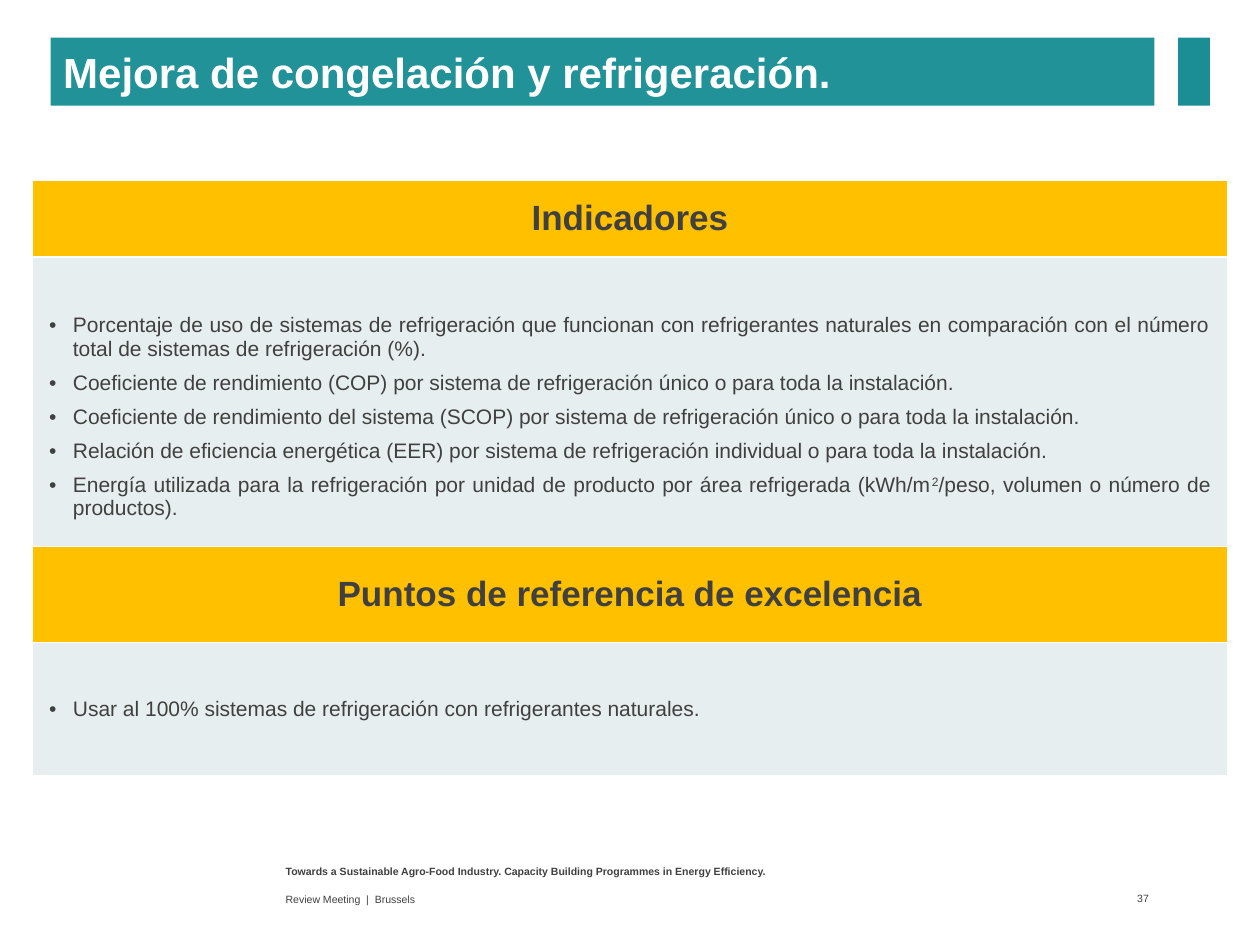
from lxml import etree
from pptx import Presentation
from pptx.dml.color import RGBColor
from pptx.enum.shapes import MSO_SHAPE
from pptx.enum.text import MSO_ANCHOR, MSO_AUTO_SIZE, PP_ALIGN
from pptx.oxml.ns import qn
from pptx.util import Cm, Pt

MIDDLE, TOP = MSO_ANCHOR.MIDDLE, MSO_ANCHOR.TOP
LEFT, CENTER = PP_ALIGN.LEFT, PP_ALIGN.CENTER
RIGHT, JUSTIFY = PP_ALIGN.RIGHT, PP_ALIGN.JUSTIFY
RECTANGLE = MSO_SHAPE.RECTANGLE

COLORS = {
    "text": "404040",
    "white": "FFFFFF",
    "banner": "209298",
    "accent": "1B8E95",
    "heading": "FFC000",
    "body": "E7EEEF",
}
FONT = "Arial"
TABLE_LEFT, TABLE_WIDTH = Cm(0.66), Cm(24.08)
INDENT = Cm(0.48)
BORDERS = ("a:lnL", "a:lnR", "a:lnT", "a:lnB")

# Heading, top, row heights, bottom margin of the list, list items.
# A tuple item holds text before, superscript and text after.
# The second table covers the foot of the first, hence its larger margin.
SECTIONS = [
    ("Indicadores", 3.63, (1.55, 7.16), 0.86, [
        "Porcentaje de uso de sistemas de refrigeración que funcionan con refrigerantes "
        "naturales en comparación con el número total de sistemas de refrigeración (%).",
        "Coeficiente de rendimiento (COP) por sistema de refrigeración único o para toda "
        "la instalación.",
        "Coeficiente de rendimiento del sistema (SCOP) por sistema de refrigeración único "
        "o para toda la instalación.",
        "Relación de eficiencia energética (EER) por sistema de refrigeración individual "
        "o para toda la instalación.",
        ("Energía utilizada para la refrigeración por unidad de producto por área "
         "refrigerada (kWh/m", "2", "/peso, volumen o número de productos)."),
    ]),
    ("Puntos de referencia de excelencia", 11.02, (1.93, 2.69), 0.15, [
        "Usar al 100% sistemas de refrigeración con refrigerantes naturales.",
    ]),
]

FOOTERS = [
    ("Towards a Sustainable Agro-Food Industry. Capacity Building Programmes in Energy "
     "Efficiency.", (5.51, 17.32, 13.97, 0.53), TOP, LEFT, True, 0.25),
    ("Review Meeting  |  Brussels", (5.51, 17.88, 13.97, 0.48), MIDDLE, LEFT, False, 0.25),
    ("37", (21.84, 17.86, 1.42, 0.51), MIDDLE, RIGHT, False, 0.1),
]


def format_text(paragraph, size, bold=False, color="text", align=LEFT):
    paragraph.alignment = align
    for run in paragraph.runs:
        run.font.name = FONT
        run.font.size = Pt(size)
        run.font.bold = bold
        run.font.color.rgb = RGBColor.from_string(COLORS[color])


def style_cell(cell, fill):
    """Give the cell white borders, a fill and centred height."""
    cell.vertical_anchor = MIDDLE
    properties = cell._tc.get_or_add_tcPr()
    for side in BORDERS:
        line = etree.SubElement(properties, qn(side), w=str(Pt(1)))
        solid = etree.SubElement(line, qn("a:solidFill"))
        etree.SubElement(solid, qn("a:srgbClr"), val=COLORS["white"])
    cell.fill.solid()
    cell.fill.fore_color.rgb = RGBColor.from_string(COLORS[fill])


prs = Presentation()
prs.slide_width, prs.slide_height = Cm(25.4), Cm(19.05)
slide = prs.slides.add_slide(prs.slide_layouts[5])

# Footer lines and page number
for wording, place, anchor, align, bold, right_margin in FOOTERS:
    frame = slide.shapes.add_textbox(*map(Cm, place)).text_frame
    frame.word_wrap = True
    frame.vertical_anchor = anchor
    frame.margin_right = Cm(right_margin)
    frame.text = wording
    format_text(frame.paragraphs[0], 6, bold, align=align)

# Heading and list tables
for heading, top, heights, bottom_margin, items in SECTIONS:
    table = slide.shapes.add_table(
        2, 1, TABLE_LEFT, Cm(top), TABLE_WIDTH, Cm(sum(heights))).table
    for row, height in zip(table.rows, heights):
        row.height = Cm(height)

    heading_cell, list_cell = table.cell(0, 0), table.cell(1, 0)
    style_cell(heading_cell, "heading")
    heading_cell.text_frame.text = heading
    format_text(heading_cell.text_frame.paragraphs[0], 20, True, align=CENTER)

    style_cell(list_cell, "body")
    list_cell.margin_left = list_cell.margin_right = Cm(0.33)
    list_cell.margin_top, list_cell.margin_bottom = Cm(0.15), Cm(bottom_margin)
    for index, item in enumerate(items):
        frame = list_cell.text_frame
        paragraph = frame.paragraphs[0] if index == 0 else frame.add_paragraph()
        paragraph.space_after = Pt(6)
        properties = paragraph._p.get_or_add_pPr()
        properties.set("marL", str(INDENT))
        properties.set("indent", str(-INDENT))
        etree.SubElement(properties, qn("a:buFont"), typeface=FONT)
        etree.SubElement(properties, qn("a:buChar"), char="•")
        if isinstance(item, tuple):
            for part in item:
                paragraph.add_run().text = part
            paragraph.runs[1]._r.get_or_add_rPr().set("baseline", "30000")
        else:
            paragraph.text = item
        format_text(paragraph, 12, align=JUSTIFY)

# Title banner
title = slide.shapes.title
title.left, title.top, title.width, title.height = map(Cm, (1.02, 0.76, 22.25, 1.37))
title.fill.solid()
title.fill.fore_color.rgb = RGBColor.from_string(COLORS["banner"])
title.text_frame.text = "Mejora de congelación y refrigeración."
title.text_frame.auto_size = MSO_AUTO_SIZE.NONE
title.text_frame.vertical_anchor = MIDDLE
format_text(title.text_frame.paragraphs[0], 24, True, "white")

accent = slide.shapes.add_shape(RECTANGLE, *map(Cm, (23.75, 0.76, 0.64, 1.37)))
accent.shadow.inherit = False
accent.fill.solid()
accent.fill.fore_color.rgb = RGBColor.from_string(COLORS["accent"])
accent.line.fill.background()

prs.save("out.pptx")
